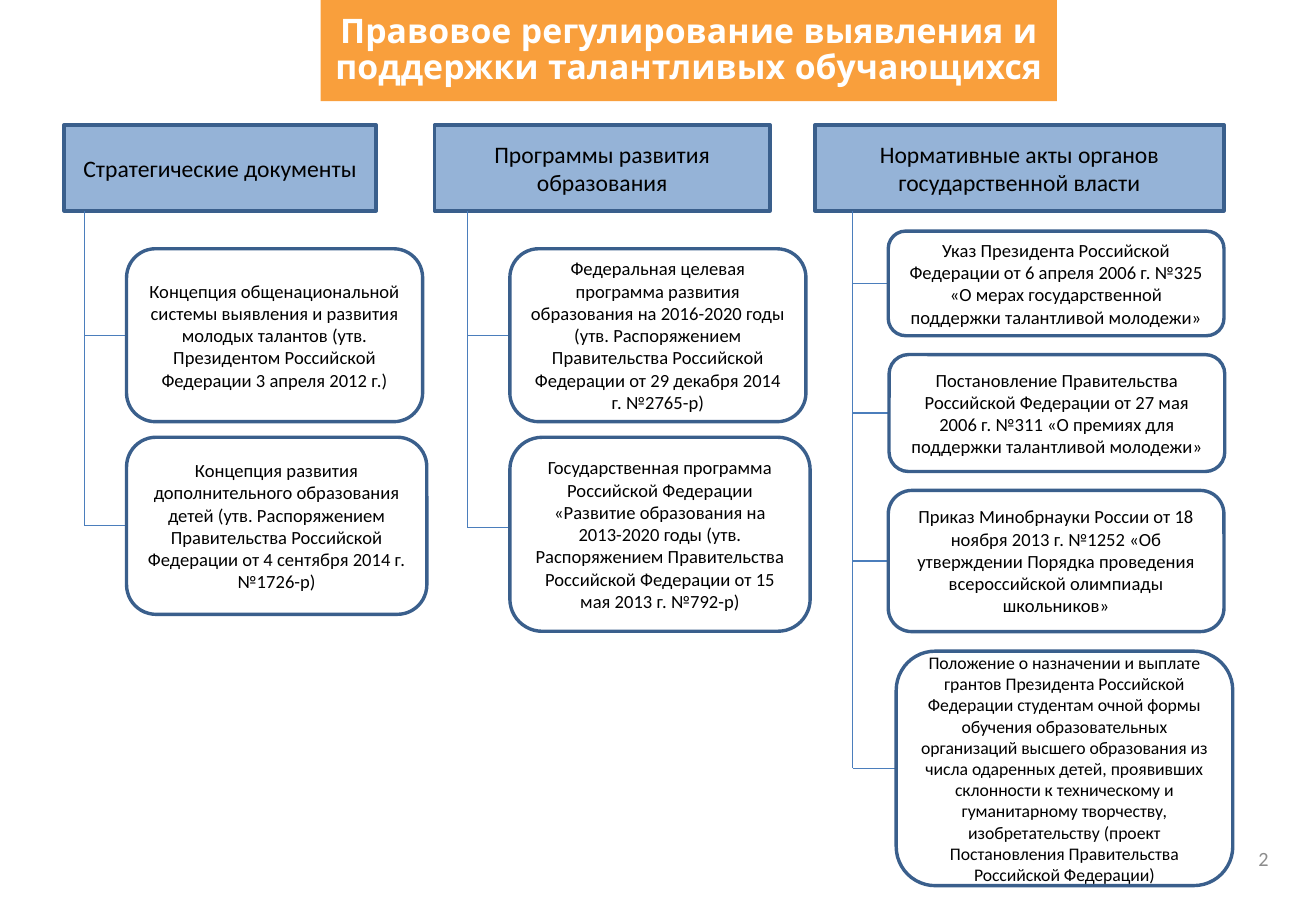
from dataclasses import dataclass
from typing import Optional

from lxml.etree import SubElement
from pptx import Presentation
from pptx.dml.color import RGBColor
from pptx.enum.shapes import MSO_CONNECTOR, MSO_SHAPE
from pptx.enum.text import MSO_ANCHOR, PP_ALIGN
from pptx.oxml.ns import qn
from pptx.shapes.autoshape import Shape
from pptx.shapes.connector import Connector
from pptx.slide import Slide
from pptx.util import Pt

ORANGE = RGBColor(0xF9, 0x9F, 0x3C)
LIGHT_BLUE = RGBColor(0x95, 0xB3, 0xD7)
OUTLINE_BLUE = RGBColor(0x3A, 0x5F, 0x8C)
LINK_BLUE = RGBColor(0x4B, 0x7E, 0xBC)
GREY = RGBColor(0x8C, 0x8C, 0x8C)
WHITE = RGBColor(0xFF, 0xFF, 0xFF)
BLACK = RGBColor(0x00, 0x00, 0x00)

HEADER_TOP = 74
HEADER_HEIGHT = 51
LEFT_SIDE = 1


@dataclass
class Box:
    left: float
    top: float
    width: float
    height: float


@dataclass
class Document:
    box: Box
    text: str
    size: float = 11
    branch_y: Optional[float] = None

    @property
    def link_y(self) -> float:
        return self.branch_y or self.box.top + self.box.height / 2


@dataclass
class Column:
    left: float
    width: float
    trunk_x: float
    title: str
    documents: list[Document]


COLUMNS = [
    Column(38, 185, 50, "Стратегические документы", [
        Document(Box(75, 147.5, 175.5, 102.5),
                 "Концепция общенациональной системы выявления и развития молодых талантов "
                 "(утв. Президентом Российской Федерации 3 апреля 2012 г.)"),
        Document(Box(75, 259.2, 178, 105),
                 "Концепция развития дополнительного образования детей (утв. Распоряжением "
                 "Правительства Российской Федерации от 4 сентября 2014 г. №1726-р)"),
    ]),
    Column(257.5, 199, 277, "Программы развития образования", [
        Document(Box(302.2, 147.5, 175.5, 102.5),
                 "Федеральная целевая программа развития образования на 2016-2020 годы (утв. "
                 "Распоряжением Правительства Российской Федерации от 29 декабря 2014 г. №2765-р)"),
        Document(Box(302.2, 259.2, 178, 115),
                 "Государственная программа Российской Федерации «Развитие образования на "
                 "2013-2020 годы (утв. Распоряжением Правительства Российской Федерации "
                 "от 15 мая 2013 г. №792-р)", branch_y=312.5),
    ]),
    Column(483, 242.5, 505.4, "Нормативные акты органов государственной власти", [
        Document(Box(526.5, 137, 199, 62),
                 "Указ Президента Российской Федерации от 6 апреля 2006 г. №325 «О мерах "
                 "государственной поддержки талантливой молодежи»"),
        Document(Box(527, 210.2, 199, 69.3),
                 "Постановление Правительства Российской Федерации от 27 мая 2006 г. №311 "
                 "«О премиях для поддержки талантливой молодежи»"),
        Document(Box(526.5, 290.7, 199, 83.7),
                 "Приказ Минобрнауки России от 18 ноября 2013 г. №1252 «Об утверждении "
                 "Порядка проведения всероссийской олимпиады школьников»"),
        Document(Box(531.2, 386, 199.5, 139),
                 "Положение о назначении и выплате грантов Президента Российской Федерации "
                 "студентам очной формы обучения образовательных организаций высшего образования "
                 "из числа одаренных детей, проявивших склонности к техническому и гуманитарному "
                 "творчеству, изобретательству (проект Постановления Правительства Российской "
                 "Федерации)", size=10.5),
    ]),
]


def add_text_shape(slide: Slide, kind: MSO_SHAPE, box: Box, text: str, size: float,
                   fill: Optional[RGBColor] = None, outline: Optional[RGBColor] = None,
                   color: RGBColor = BLACK, font_name: str = "Calibri", bold: bool = False,
                   alignment: PP_ALIGN = PP_ALIGN.CENTER) -> Shape:
    shape = slide.shapes.add_shape(kind, Pt(box.left), Pt(box.top), Pt(box.width), Pt(box.height))
    shape.shadow.inherit = False
    if fill is None:
        shape.fill.background()
    else:
        shape.fill.solid()
        shape.fill.fore_color.rgb = fill
    if outline is None:
        shape.line.fill.background()
    else:
        shape.line.color.rgb = outline
        shape.line.width = Pt(2)
    text_frame = shape.text_frame
    text_frame.text = text
    text_frame.word_wrap = True
    text_frame.vertical_anchor = MSO_ANCHOR.MIDDLE
    paragraph = text_frame.paragraphs[0]
    paragraph.alignment = alignment
    font = paragraph.runs[0].font
    font.name = font_name
    font.size = Pt(size)
    font.bold = bold
    font.color.rgb = color
    return shape


def add_link(slide: Slide, start_x: float, start_y: float, end_x: float, end_y: float) -> Connector:
    link = slide.shapes.add_connector(
        MSO_CONNECTOR.STRAIGHT, Pt(start_x), Pt(start_y), Pt(end_x), Pt(end_y))
    link.line.color.rgb = LINK_BLUE
    link.line.width = Pt(0.75)
    SubElement(link._element.spPr, qn("a:effectLst"))
    return link


def add_column(slide: Slide, column: Column) -> None:
    header_box = Box(column.left, HEADER_TOP, column.width, HEADER_HEIGHT)
    add_text_shape(slide, MSO_SHAPE.RECTANGLE, header_box, column.title, 14,
                   fill=LIGHT_BLUE, outline=OUTLINE_BLUE)
    add_link(slide, column.trunk_x, HEADER_TOP + HEADER_HEIGHT,
             column.trunk_x, column.documents[-1].link_y)
    for document in column.documents:
        branch = add_link(slide, column.trunk_x, document.link_y,
                          document.box.left, document.link_y)
        shape = add_text_shape(slide, MSO_SHAPE.ROUNDED_RECTANGLE, document.box,
                               document.text, document.size, outline=OUTLINE_BLUE)
        if document.branch_y is None:
            branch.end_connect(shape, LEFT_SIDE)


def main() -> None:
    presentation = Presentation()
    presentation.slide_width = Pt(780)
    presentation.slide_height = Pt(540)
    slide = presentation.slides.add_slide(presentation.slide_layouts[6])
    title = add_text_shape(slide, MSO_SHAPE.RECTANGLE, Box(190, 0, 436.5, 60),
                           "Правовое регулирование выявления и поддержки талантливых обучающихся",
                           20, fill=ORANGE, color=WHITE, font_name="Quicksand", bold=True)
    title.text_frame.paragraphs[0].line_spacing = 0.9
    add_text_shape(slide, MSO_SHAPE.RECTANGLE, Box(577, 494.6, 182, 29), "2", 12,
                   color=GREY, alignment=PP_ALIGN.RIGHT)
    for column in COLUMNS:
        add_column(slide, column)
    presentation.save("out.pptx")


if __name__ == "__main__":
    main()
